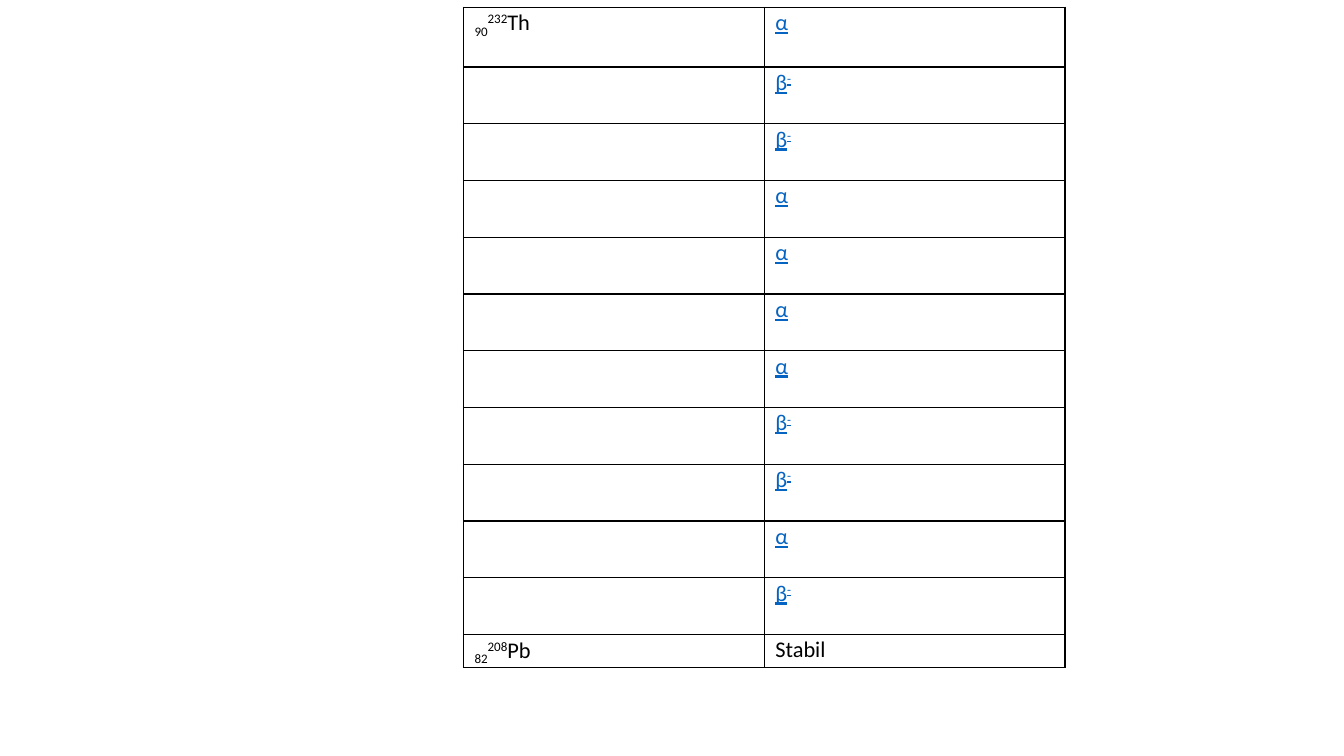
from lxml import etree
from pptx import Presentation
from pptx.dml.color import RGBColor
from pptx.oxml.ns import qn
from pptx.util import Cm, Pt

BLACK = RGBColor(0x00, 0x00, 0x00)
LINK_BLUE = RGBColor(0x05, 0x63, 0xC1)
SUBSCRIPT = -25000
SUPERSCRIPT = 30000

ALPHA = [("α", 0)]
BETA_MINUS = [("β", 0), ("-", SUPERSCRIPT)]
DECAYS = [ALPHA, BETA_MINUS, BETA_MINUS, ALPHA, ALPHA, ALPHA,
          ALPHA, BETA_MINUS, BETA_MINUS, ALPHA, BETA_MINUS]
COLUMN_WIDTHS = [7.58, 7.58]
ROW_HEIGHTS = [1.51] + [1.43] * 10 + [0.81]


def nuclide(protons, mass, symbol):
    return [(protons, SUBSCRIPT), (mass, SUPERSCRIPT), (symbol, 0)]


class DecayPage:
    font = "Calibri"
    size = Pt(16)
    border = Pt(1)
    side_margin = Cm(0.28)

    def __init__(self, deck):
        self.page = deck.slides.add_slide(deck.slide_layouts[6])

    def table(self, left, top, widths, heights):
        frame = self.page.shapes.add_table(
            len(heights), len(widths), Cm(left), Cm(top),
            Cm(sum(widths)), Cm(sum(heights)))
        table = frame.table
        table.first_row = False
        table.horz_banding = False
        for column, width in zip(table.columns, widths):
            column.width = Cm(width)
        for row, height in zip(table.rows, heights):
            row.height = Cm(height)
        for cell in table.iter_cells():
            self.cell_style(cell)
        return table

    def cell_style(self, cell):
        cell.fill.background()
        cell.margin_left = cell.margin_right = self.side_margin
        cell.margin_top = cell.margin_bottom = 0
        properties = cell._tc.get_or_add_tcPr()
        for position, side in enumerate(("a:lnL", "a:lnR", "a:lnT", "a:lnB")):
            line = etree.Element(qn(side), w=str(self.border))
            fill = etree.SubElement(line, qn("a:solidFill"))
            etree.SubElement(fill, qn("a:srgbClr"), val=str(BLACK))
            properties.insert(position, line)

    def cell_text(self, cell, spans, color=BLACK, underline=False):
        para = cell.text_frame.paragraphs[0]
        para.line_spacing = 1.07
        for text, baseline in spans:
            span = para.add_run()
            span.text = text
            span.font.name = self.font
            span.font.size = self.size
            span.font.color.rgb = color
            span.font.underline = underline
            if baseline:
                span.font._element.set("baseline", str(baseline))


def main():
    deck = Presentation()
    deck.slide_width = Cm(33.87)
    deck.slide_height = Cm(19.05)
    page = DecayPage(deck)
    chain = page.table(11.68, 0.18, COLUMN_WIDTHS, ROW_HEIGHTS)
    last = len(DECAYS)
    page.cell_text(chain.cell(0, 0), nuclide("90", "232", "Th"))
    for row, decay in enumerate(DECAYS):
        page.cell_text(chain.cell(row, 1), decay, LINK_BLUE, True)
    page.cell_text(chain.cell(last, 0), nuclide("82", "208", "Pb"))
    page.cell_text(chain.cell(last, 1), [("Stabil", 0)])
    deck.save("out.pptx")


if __name__ == "__main__":
    main()
